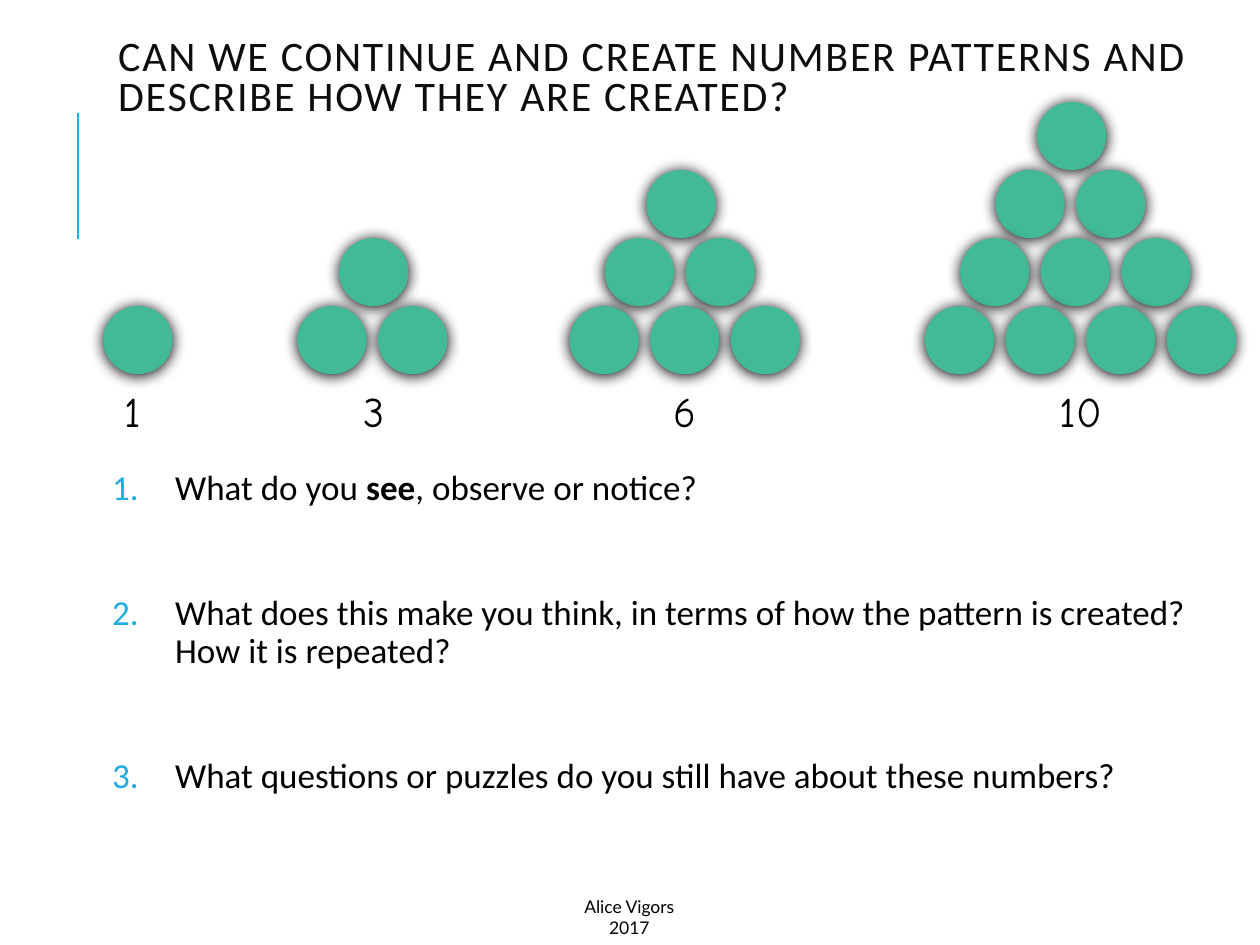
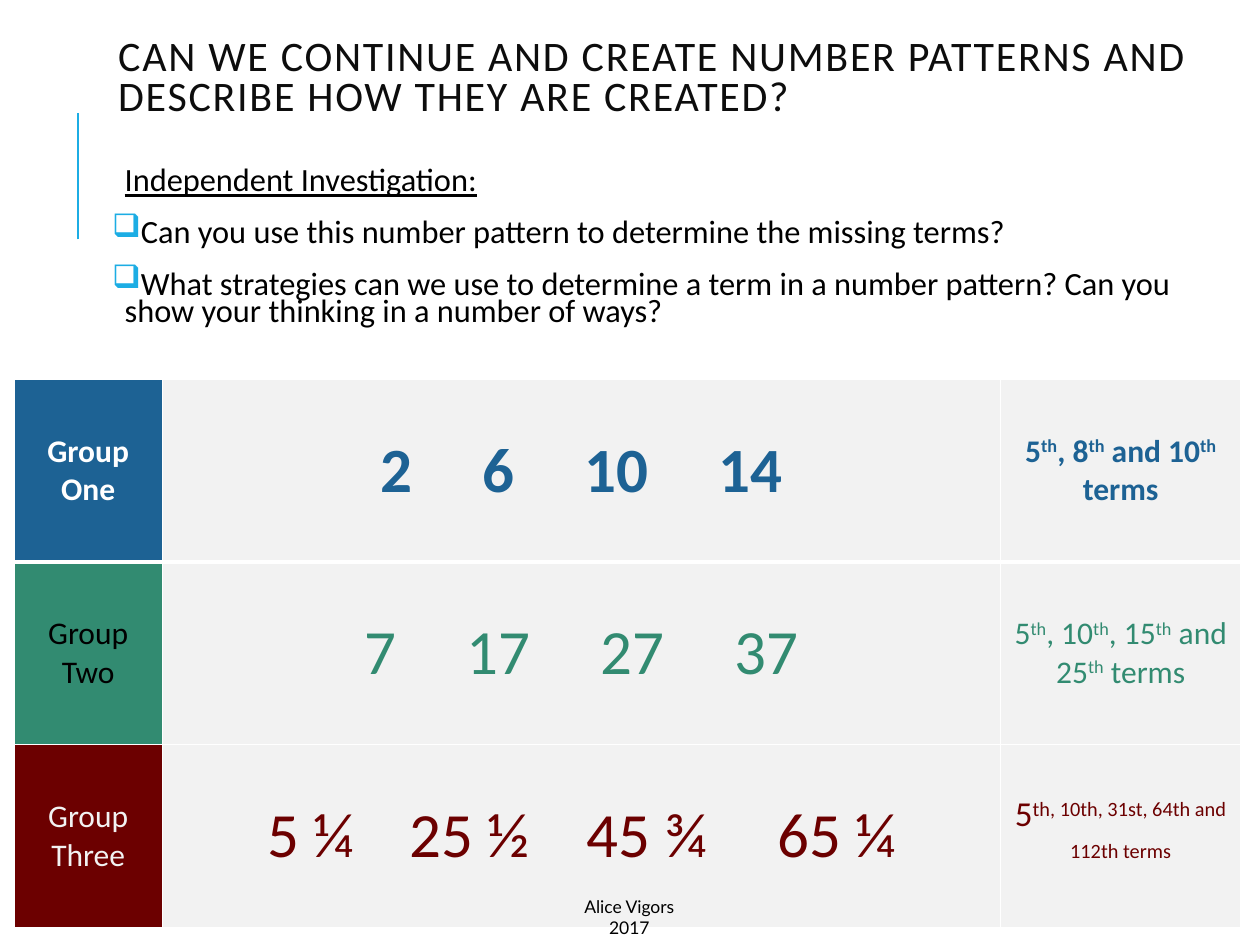
"""Build two slides on triangular number patterns and missing terms."""
from dataclasses import dataclass

from lxml import etree
from pptx import Presentation
from pptx import util as u
from pptx.dml.color import RGBColor
from pptx.enum import shapes, text
from pptx.oxml.ns import qn

Inches = u.Inches


@dataclass(frozen=True)
class Theme:
    font: str = "Calibri"
    label_font: str = "Comic Neue"
    footer_font: str = "Lato"
    accent: str = "1CADE4"
    title: str = "0D0D0D"
    ink: str = "000000"
    white: str = "FFFFFF"
    pale: str = "F2F2F2"
    counter: str = "42BA97"
    blue: str = "1D6294"
    green: str = "328B71"
    maroon: str = "6C0000"
    title_size: float = 24
    question_size: float = 20
    task_size: float = 18.5
    cell_size: float = 18
    sequence_size: float = 36
    footer_size: float = 10


THEME = Theme()
TITLE = "CAN WE CONTINUE AND CREATE NUMBER PATTERNS AND DESCRIBE HOW THEY ARE CREATED?"
FOOTER = "Alice Vigors 2017"
QUESTIONS = [
    "What do you ^see^, observe or notice?",
    "What does this make you think, in terms of how the pattern is created? How it is repeated?",
    "What questions or puzzles do you still have about these numbers?",
]
TASK_HEADING = "Independent Investigation:"
TASKS = [
    "Can you use this number pattern to determine the missing terms?",
    "What strategies can we use to determine a term in a number pattern? "
    "Can you show your thinking in a number of ways?",
]
TRIANGLES = [
    (1, 0.82, 0.78, 0.55),
    (2, 2.36, 2.69, 0.55),
    (3, 4.52, 5.16, 0.55),
    (4, 7.34, 8.26, 0.64),
]
GROUPS = [
    ("Group One", THEME.white, THEME.blue, ["2", "6", "10", "14"], [32, 32, 32],
     "5^th^, 8^th^ and 10^th^ terms", 18, True),
    ("Group Two", THEME.ink, THEME.green, ["7", "17", "27", "37"], [32, 32, 32],
     "5^th^, 10^th^, 15^th^ and 25^th^ terms", 18, False),
    ("Group Three", THEME.pale, THEME.maroon, ["5 ¼", "25 ½", "45 ¾", "65 ¼"], [24, 24, 32],
     "5^th, 10th, 31st, 64th and 112th terms", 20, False),
]
COLUMN_WIDTHS = [1.18, 6.65, 1.91]
ROW_HEIGHT = 1.45


def marked(line, **attributes):
    """Split a line at ^ marks, giving every second piece the attributes."""
    return [(piece, attributes if index % 2 else {})
            for index, piece in enumerate(line.split("^")) if piece]


def spaced(terms, gaps):
    """Join terms with single spaces widened by the gaps in points."""
    pieces = [(terms[0], {})]
    for term, gap in zip(terms[1:], gaps):
        pieces += [(" ", {"spc": str(gap * 100)}), (term, {})]
    return pieces


def set_font(font, name, size, color, bold=False, underline=False):
    """Apply the typeface, size, colour and weight to a font."""
    font.name, font.size = name, u.Pt(size)
    font.color.rgb = RGBColor.from_string(color)
    if bold:
        font.bold = True
    if underline:
        font.underline = True


class Deck:
    """Hold the theme and current slide and draw each kind of element."""

    def __init__(self, theme):
        self.theme = theme
        self.presentation = Presentation()
        self.presentation.slide_width = Inches(10)
        self.presentation.slide_height = Inches(7.5)
        self.slide = None

    def new_slide(self):
        """Add a blank slide with the side rule and title."""
        self.slide = self.presentation.slides.add_slide(self.presentation.slide_layouts[6])
        self.rule(0.62, 1.9, 0.62, 0.9)
        frame = self.text_box(0.84, 0.4, 8.77, 0.79, (0.1, 0, 0.1, 0.24))
        frame.vertical_anchor = text.MSO_ANCHOR.BOTTOM
        paragraph = frame.paragraphs[0]
        self.add_runs(paragraph, [(TITLE, {"spc": "100"})])
        paragraph.line_spacing = 0.8
        set_font(paragraph.font, self.theme.font, self.theme.title_size, self.theme.title)

    def rule(self, x1, y1, x2, y2):
        """Draw an accent line without a shadow."""
        line = self.slide.shapes.add_connector(
            shapes.MSO_CONNECTOR.STRAIGHT, Inches(x1), Inches(y1), Inches(x2), Inches(y2))
        line.line.color.rgb = RGBColor.from_string(self.theme.accent)
        line.line.width = u.Pt(1.5)
        etree.SubElement(line._element.spPr, qn("a:effectLst"))

    def text_box(self, left, top, width, height, insets=(0.1, 0.05, 0.1, 0.05), parent=None):
        """Add a wrapping text box and return its frame."""
        box = (parent or self.slide).shapes.add_textbox(
            Inches(left), Inches(top), Inches(width), Inches(height))
        frame = box.text_frame
        frame.word_wrap = True
        frame.margin_left, frame.margin_top, frame.margin_right, frame.margin_bottom = map(
            Inches, insets)
        return frame

    def add_runs(self, paragraph, pieces):
        """Add a run for each piece with its own run attributes."""
        for piece, attributes in pieces:
            run = paragraph.add_run()
            run.text = piece
            for name, value in attributes.items():
                run._r.get_or_add_rPr().set(name, value)

    def label(self, content, left, top, width, height, font, size, parent=None):
        """Add a centred caption."""
        paragraph = self.text_box(left, top, width, height, parent=parent).paragraphs[0]
        self.add_runs(paragraph, [(content, {})])
        paragraph.alignment = text.PP_ALIGN.CENTER
        set_font(paragraph.font, font, size, self.theme.ink)

    def list_item(self, frame, content, size, bullet, indent, hanging, line_spacing,
                  space_before=12, underline=False):
        """Add a list paragraph with a bullet given as a tag and attributes."""
        first = not frame.paragraphs[0].runs
        paragraph = frame.paragraphs[0] if first else frame.add_paragraph()
        self.add_runs(paragraph, marked(content, b="1"))
        properties = paragraph._p.get_or_add_pPr()
        properties.set("marL", str(int(Inches(indent))))
        properties.set("indent", str(-int(Inches(hanging))))
        color = etree.SubElement(properties, qn("a:buClr"))
        etree.SubElement(color, qn("a:srgbClr")).set("val", self.theme.accent)
        tag, attributes = bullet
        etree.SubElement(properties, qn(tag), attributes)
        paragraph.line_spacing = line_spacing
        paragraph.space_before, paragraph.space_after = u.Pt(space_before), u.Pt(2)
        set_font(paragraph.font, self.theme.font, size, self.theme.ink, underline=underline)

    def counter(self, group, left, top):
        """Add one round counter with a soft dark shadow."""
        circle = group.shapes.add_shape(
            shapes.MSO_SHAPE.OVAL, Inches(left), Inches(top), Inches(0.55), Inches(0.54))
        circle.shadow.inherit = False
        circle.fill.solid()
        circle.fill.fore_color.rgb = RGBColor.from_string(self.theme.counter)
        circle.line.fill.background()
        effects = circle._element.spPr.find(qn("a:effectLst"))
        shadow = etree.SubElement(effects, qn("a:outerShdw"), {
            "blurRad": str(int(u.Pt(8.5))), "dist": str(int(u.Pt(1))),
            "dir": "5400000", "rotWithShape": "0"})
        etree.SubElement(shadow, qn("a:srgbClr")).set("val", self.theme.ink)

    def triangle(self, size, left, label_left, label_width):
        """Stack counters into a triangle and caption it with their number."""
        group = self.slide.shapes.add_group_shape()
        for level in reversed(range(size)):
            apex_shift = 0.05 if 0 < level == size - 1 else 0
            row_left = left + 0.28 * level + apex_shift
            for column in range(size - level):
                self.counter(group, row_left + 0.64 * column, 2.43 - 0.54 * level)
        self.label(str(size * (size + 1) // 2), label_left, 3.01, label_width, 0.5,
                   self.theme.label_font, self.theme.title_size, group)

    def cell(self, cell, pieces, size, color, fill, bold, top_width, bottom_width):
        """Fill a table cell, centre its text and draw its white borders."""
        cell.fill.solid()
        cell.fill.fore_color.rgb = RGBColor.from_string(fill)
        cell.vertical_anchor = text.MSO_ANCHOR.MIDDLE
        paragraph = cell.text_frame.paragraphs[0]
        paragraph.alignment = text.PP_ALIGN.CENTER
        self.add_runs(paragraph, pieces)
        for run in paragraph.runs:
            set_font(run.font, self.theme.font, size, color, bold)
        properties = cell._tc.get_or_add_tcPr()
        borders = [("a:lnL", 1), ("a:lnR", 1), ("a:lnT", top_width), ("a:lnB", bottom_width)]
        for index, (tag, width) in enumerate(borders):
            border = etree.Element(qn(tag), {"w": str(int(u.Pt(width)))})
            paint = etree.SubElement(border, qn("a:solidFill"))
            etree.SubElement(paint, qn("a:srgbClr")).set("val", self.theme.white)
            properties.insert(index, border)

    def group_table(self, left, top):
        """Add the table of number sequences and missing terms."""
        theme = self.theme
        table = self.slide.shapes.add_table(
            len(GROUPS), len(COLUMN_WIDTHS), Inches(left), Inches(top),
            Inches(sum(COLUMN_WIDTHS)), Inches(ROW_HEIGHT * len(GROUPS))).table
        table.first_row = table.horz_banding = False
        for column, width in zip(table.columns, COLUMN_WIDTHS):
            column.width = Inches(width)
        for index, group in enumerate(GROUPS):
            name, name_color, color, terms, gaps, missing, missing_size, bold = group
            table.rows[index].height = Inches(ROW_HEIGHT)
            contents = [
                ([(name, {})], theme.cell_size, name_color, color),
                (spaced(terms, gaps), theme.sequence_size, color, theme.pale),
                (marked(missing, baseline="30000"), missing_size, color, theme.pale),
            ]
            edges = (3 if index == 1 else 1, 3 if index == 0 else 1)
            for column, content in enumerate(contents):
                self.cell(table.cell(index, column), *content, bold, *edges)

    def footer(self):
        """Add the shared footer."""
        self.label(FOOTER, 4.46, 7.06, 1.07, 0.44, self.theme.footer_font, self.theme.footer_size)


def main():
    """Build and save the presentation."""
    deck = Deck(THEME)
    body_insets = (0.05,) * 4

    deck.new_slide()
    questions = deck.text_box(0.84, 3.68, 8.85, 3.22, body_insets)
    for index, question in enumerate(QUESTIONS):
        deck.list_item(questions, question, THEME.question_size,
                       ("a:buAutoNum", {"type": "arabicPeriod"}), 0.5, 0.5, 0.9,
                       space_before=48 if index else 12)
    for triangle in TRIANGLES:
        deck.triangle(*triangle)
    deck.footer()

    deck.new_slide()
    tasks = deck.text_box(0.84, 1.3, 8.77, 1.71, body_insets)
    deck.list_item(tasks, TASK_HEADING, THEME.task_size, ("a:buNone", {}), 0.1, 0, 0.7,
                   underline=True)
    for task in TASKS:
        deck.list_item(tasks, task, THEME.task_size, ("a:buChar", {"char": "❑"}), 0.1, 0.1, 0.7)
    deck.group_table(0.11, 3.01)
    deck.footer()

    deck.presentation.save("out.pptx")


if __name__ == "__main__":
    main()
